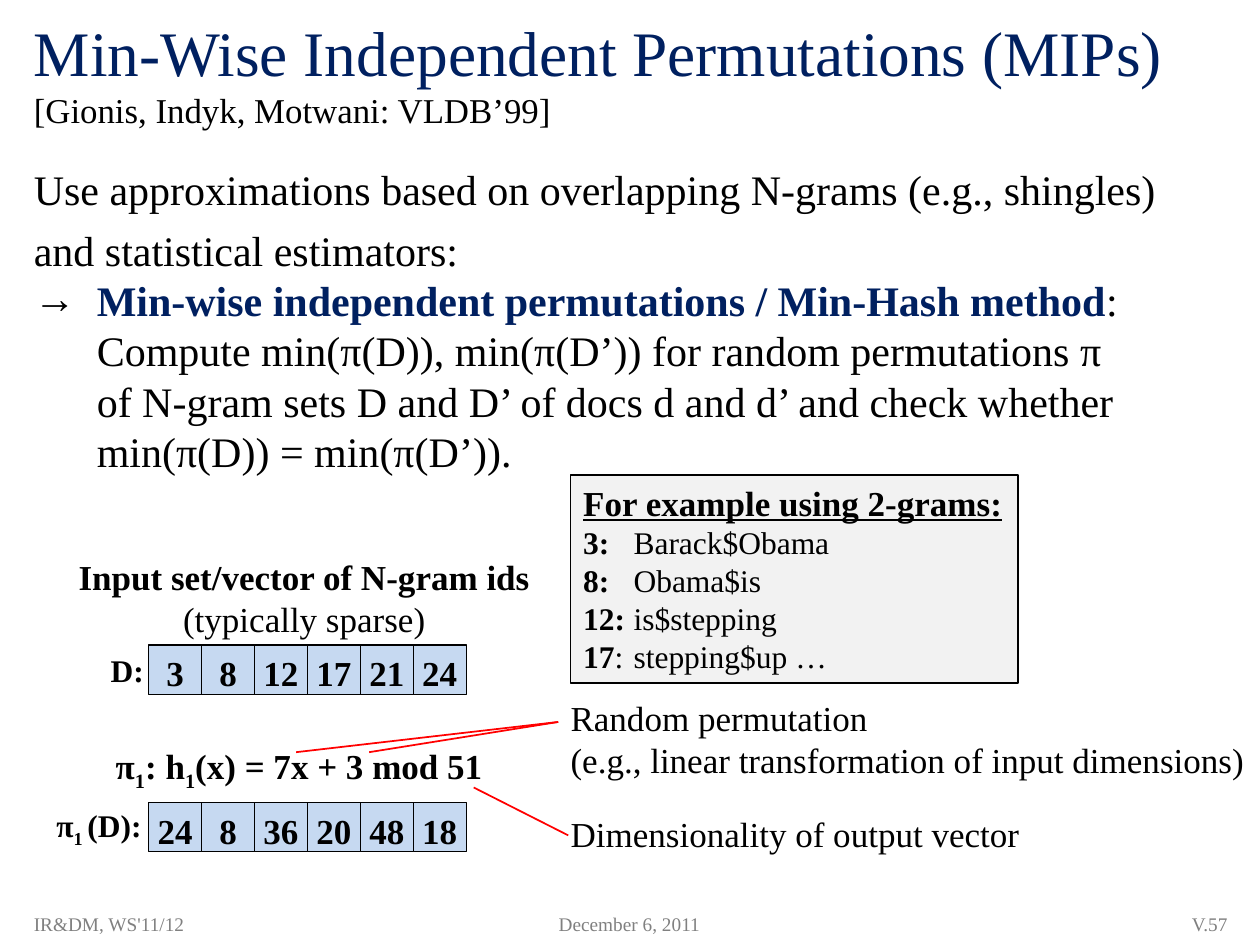
import dataclasses

import pptx
import pptx.dml.color
import pptx.enum.shapes
import pptx.enum.text
import pptx.oxml
import pptx.oxml.ns
import pptx.util
from pptx.util import Inches

ALIGN = pptx.enum.text.PP_ALIGN
ANCHOR = pptx.enum.text.MSO_ANCHOR


@dataclasses.dataclass(frozen=True)
class Theme:
    """Colours, font and type sizes of the slide."""
    font: str = "Times New Roman"
    black: str = "000000"
    navy: str = "002060"
    cell: str = "C6D9F1"
    panel: str = "F2F2F2"
    red: str = "FF0000"
    grey: str = "808080"
    title: float = 36.2
    body: float = 24
    label: float = 20
    source: float = 19.9
    small: float = 18
    footer: float = 11


THEME = Theme()


def rgb(value):
    """Return a colour object for a hex string."""
    return pptx.dml.color.RGBColor.from_string(value)


def add_element(parent, tag, **attributes):
    """Append a drawing element with attributes to its parent."""
    element = pptx.oxml.parse_xml(f"<a:{tag} {pptx.oxml.ns.nsdecls('a')}/>")
    for name, value in attributes.items():
        element.set(name, str(value))
    parent.append(element)
    return element


def style_paragraph(paragraph, size, color=THEME.black, bold=False, align=ALIGN.LEFT):
    """Set the font and alignment of a paragraph."""
    paragraph.alignment = align
    font = paragraph.font
    font.name, font.size, font.bold = THEME.font, pptx.util.Pt(size), bold
    font.color.rgb = rgb(color)


def add_run(paragraph, text, bold=None, color=None, subscript=False):
    """Add a run that differs from its paragraph only where asked."""
    run = paragraph.add_run()
    run.text = text
    if bold is not None:
        run.font.bold = bold
    if color:
        run.font.color.rgb = rgb(color)
    if subscript:
        run.font._element.set("baseline", "-25000")


def next_paragraph(frame):
    """Return the first paragraph while it is empty, else a new one."""
    return frame.add_paragraph() if frame.paragraphs[0].runs else frame.paragraphs[0]


def add_frame(slide, box, wrap=False):
    """Add a text box and return its text frame."""
    frame = slide.shapes.add_textbox(*map(Inches, box)).text_frame
    frame.word_wrap = wrap
    return frame


def add_label(slide, box, lines, size=THEME.label, bold=False, align=ALIGN.LEFT):
    """Add a label with one paragraph for each line."""
    frame = add_frame(slide, box)
    for line in lines:
        paragraph = next_paragraph(frame)
        style_paragraph(paragraph, size, bold=bold, align=align)
        add_run(paragraph, line)
    return frame


def add_formula(slide, box, parts, size):
    """Add a bold label whose every second part is a subscript."""
    paragraph = add_frame(slide, box).paragraphs[0]
    style_paragraph(paragraph, size, bold=True)
    for index, part in enumerate(parts):
        add_run(paragraph, part, subscript=index % 2 == 1)


def add_rectangle(slide, box, fill):
    """Add a flat rectangle with a thin black outline."""
    shape = slide.shapes.add_shape(
        pptx.enum.shapes.MSO_SHAPE.RECTANGLE, *map(Inches, box))
    shape.shadow.inherit = False
    shape.fill.solid()
    shape.fill.fore_color.rgb = rgb(fill)
    shape.line.color.rgb = rgb(THEME.black)
    shape.line.width = pptx.util.Pt(0.75)
    return shape


def add_title(slide, box):
    """Add the title and the citation under it."""
    frame = add_frame(slide, box, wrap=True)
    title = next_paragraph(frame)
    title.line_spacing = 0.8
    style_paragraph(title, THEME.title, THEME.navy)
    add_run(title, "Min-Wise Independent Permutations (MIPs)")
    citation = next_paragraph(frame)
    style_paragraph(citation, THEME.source)
    add_run(citation, "[Gionis, Indyk, Motwani: VLDB’99]")


def add_body(slide, box):
    """Add the introduction and the indented method."""
    frame = add_frame(slide, box, wrap=True)
    for line in ("Use approximations based on overlapping N-grams (e.g., shingles)",
                 "and statistical estimators:"):
        paragraph = next_paragraph(frame)
        paragraph.line_spacing = 1.2
        style_paragraph(paragraph, THEME.body)
        add_run(paragraph, line)

    indent = Inches(0.5)
    method = next_paragraph(frame)
    properties = method._p.get_or_add_pPr()
    properties.set("marL", str(indent))
    properties.set("indent", str(-indent))
    add_element(add_element(properties, "buClr"), "srgbClr", val=THEME.black)
    add_element(properties, "buFont", typeface=THEME.font)
    add_element(properties, "buChar", char="→")
    style_paragraph(method, THEME.body)
    add_run(method, "Min-wise independent permutations / Min-Hash method",
            bold=True, color=THEME.navy)
    add_run(method, ":")

    for line in ("Compute min(π(D)), min(π(D’)) for random permutations π",
                 "of N-gram sets D and D’ of docs d and d’ and check whether",
                 "min(π(D)) = min(π(D’))."):
        paragraph = next_paragraph(frame)
        paragraph._p.get_or_add_pPr().set("marL", str(indent))
        style_paragraph(paragraph, THEME.body)
        add_run(paragraph, line)


def add_vector(slide, box, values):
    """Add a row of equal cells, one for each value."""
    left, top, width, height = box
    cell_width = width / len(values)
    for index, value in enumerate(values):
        cell = add_rectangle(
            slide, (left + index * cell_width, top, cell_width, height), THEME.cell)
        frame = cell.text_frame
        frame.margin_left = frame.margin_right = frame.margin_bottom = 0
        frame.vertical_anchor = ANCHOR.MIDDLE
        style_paragraph(frame.paragraphs[0], THEME.label, bold=True, align=ALIGN.CENTER)
        add_run(frame.paragraphs[0], str(value))


def add_example(slide, box):
    """Add the panel that lists the example 2-grams."""
    frame = add_rectangle(slide, box, THEME.panel).text_frame
    frame.word_wrap = False
    frame.vertical_anchor = ANCHOR.TOP
    heading = next_paragraph(frame)
    style_paragraph(heading, THEME.label, bold=True)
    heading.font.underline = True
    add_run(heading, "For example using 2-grams:")
    for number, text in (("3:", "\tBarack$Obama"), ("8:", "\tObama$is"),
                         ("12:", "\tis$stepping"), ("17", ":\tstepping$up …")):
        paragraph = next_paragraph(frame)
        tabs = add_element(paragraph._p.get_or_add_pPr(), "tabLst")
        add_element(tabs, "tab", pos=Inches(0.4), algn="l")
        style_paragraph(paragraph, THEME.small)
        add_run(paragraph, number, bold=True)
        add_run(paragraph, text)


def add_pointer(slide, start, end):
    """Add a red line from a formula part to its explanation."""
    line = slide.shapes.add_connector(
        pptx.enum.shapes.MSO_CONNECTOR.STRAIGHT, *map(Inches, start + end))
    line.line.color.rgb = rgb(THEME.red)
    line.line.width = pptx.util.Pt(1)
    add_element(line._element.spPr, "effectLst")


def add_footer(slide, top, height):
    """Add the course, date and page number along the bottom."""
    for left, width, text, align in (
            (0.17, 3, "IR&DM, WS'11/12", ALIGN.LEFT),
            (3.83, 2.33, "December 6, 2011", ALIGN.CENTER),
            (7.67, 2.17, "V.57", ALIGN.RIGHT)):
        frame = add_frame(slide, (left, top, width, height), wrap=True)
        frame.vertical_anchor = ANCHOR.MIDDLE
        style_paragraph(frame.paragraphs[0], THEME.footer, THEME.grey, align=align)
        add_run(frame.paragraphs[0], text)


def main():
    """Build the slide and save it."""
    presentation = pptx.Presentation()
    presentation.slide_width, presentation.slide_height = Inches(10), Inches(7.5)
    slide = presentation.slides.add_slide(presentation.slide_layouts[6])
    add_title(slide, (0.17, 0.17, 9.67, 1))
    add_body(slide, (0.17, 1.17, 9.5, 2.69))
    add_example(slide, (4.53, 3.77, 3.55, 1.65))
    add_label(slide, (0.51, 4.36, 3.81, 0.77),
              ["Input set/vector of N-gram ids", "(typically sparse)"],
              bold=True, align=ALIGN.CENTER).paragraphs[1].font.bold = False
    add_label(slide, (0.78, 5.12, 0.47, 0.4), ["D:"], THEME.small, bold=True)
    add_vector(slide, (1.18, 5.12, 2.52, 0.39), (3, 8, 12, 17, 21, 24))
    add_formula(slide, (0.82, 5.86, 3.19, 0.44),
                ("π", "1", ": h", "1", "(x) = 7x + 3 mod 51"), THEME.label)
    add_formula(slide, (0.35, 6.35, 0.9, 0.4), ("π", "1 ", "(D):"), THEME.small)
    add_vector(slide, (1.18, 6.37, 2.52, 0.39), (24, 8, 36, 20, 48, 18))
    add_label(slide, (4.43, 5.48, 5.58, 0.77),
              ["Random permutation", "(e.g., linear transformation of input dimensions)"])
    add_label(slide, (4.43, 6.4, 3.79, 0.44), ["Dimensionality of output vector"])
    for start, end in (((2.35, 5.97), (4.43, 5.73)), ((2.93, 5.97), (4.43, 5.73)),
                       ((3.76, 6.25), (4.51, 6.63))):
        add_pointer(slide, start, end)
    add_footer(slide, 7.17, 0.33)
    presentation.save("out.pptx")


if __name__ == "__main__":
    main()
